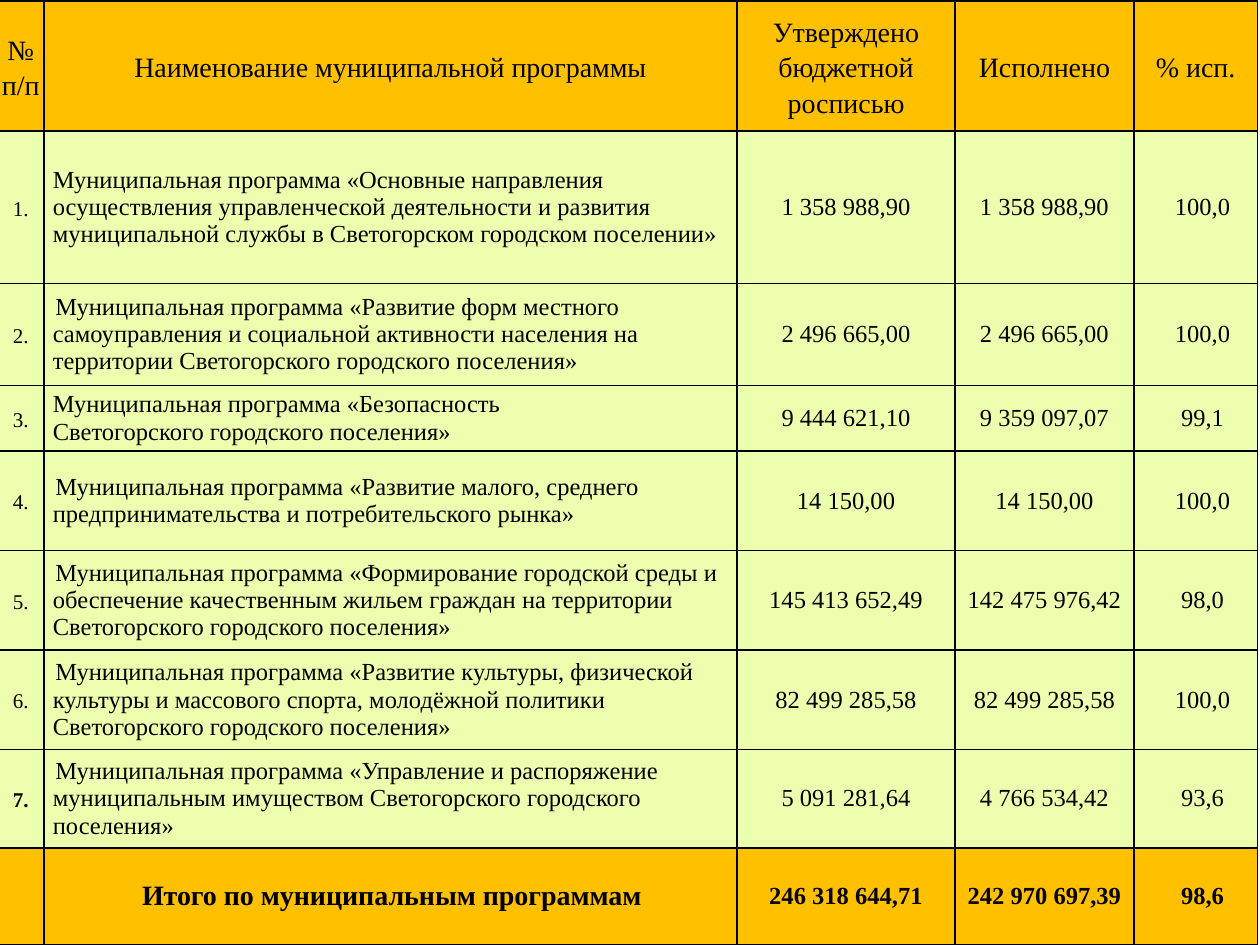
from dataclasses import dataclass

import pptx
import pptx.dml.color
import pptx.enum.text
import pptx.oxml.ns
import pptx.util
from lxml import etree

Inches = pptx.util.Inches
Pt = pptx.util.Pt
RGB = pptx.dml.color.RGBColor.from_string
qn = pptx.oxml.ns.qn
ALIGN = pptx.enum.text.PP_ALIGN
MIDDLE = pptx.enum.text.MSO_ANCHOR.MIDDLE


@dataclass(frozen=True)
class Theme:
    font: str = "Times New Roman"
    ink: str = "000000"
    accent: str = "FFC000"
    body: str = "CCFF33"
    body_alpha: int = 39
    heading_size: int = 16
    text_size: int = 14
    number_size: int = 12
    border: int = 1


THEME = Theme()

COL_WIDTHS = [0.37, 5.5, 1.73, 1.42, 0.98]
ROW_HEIGHTS = [1.03, 1.21, 0.81, 0.52, 0.79, 0.79, 0.79, 0.78, 0.77]
# Left margin and first-line indent of each column, in inches
INDENTS = [(0, 0), (0, 0.02), (0.02, -0.02), (0, 0), (0.11, 0)]

HEADER = ["№ п/п", "Наименование муниципальной программы",
          "Утверждено бюджетной росписью", "Исполнено", "% исп."]
PROGRAMS = [
    ("Муниципальная программа «Основные направления осуществления управленческой "
     "деятельности и развития муниципальной службы в Светогорском городском поселении»",
     "1 358 988,90", "1 358 988,90", "100,0"),
    ("Муниципальная программа «Развитие форм местного самоуправления и социальной "
     "активности населения на территории Светогорского городского поселения»",
     "2 496 665,00", "2 496 665,00", "100,0"),
    ("Муниципальная программа «Безопасность\nСветогорского городского поселения»",
     "9 444 621,10", "9 359 097,07", "99,1"),
    ("Муниципальная программа «Развитие малого, среднего предпринимательства "
     "и потребительского рынка»",
     "14 150,00", "14 150,00", "100,0"),
    ("Муниципальная программа «Формирование городской среды и обеспечение качественным "
     "жильем граждан на территории Светогорского городского поселения»",
     "145 413 652,49", "142 475 976,42", "98,0"),
    ("Муниципальная программа «Развитие культуры, физической культуры и массового спорта, "
     "молодёжной политики Светогорского городского поселения»",
     "82 499 285,58", "82 499 285,58", "100,0"),
    ("Муниципальная программа «Управление и распоряжение муниципальным имуществом "
     "Светогорского городского поселения»",
     "5 091 281,64", "4 766 534,42", "93,6"),
]
TOTAL = ["", "Итого по муниципальным программам",
         "246 318 644,71", "242 970 697,39", "98,6"]
NO_FIRST_LINE = (1, 3)  # programs whose name starts flush left


def write(cell, text, size=THEME.text_size, bold=False, align=ALIGN.CENTER,
          indent=(0, 0), inset=0.07, spaced=False):
    cell.vertical_anchor = MIDDLE
    cell.margin_left = cell.margin_right = Inches(inset)
    cell.margin_top = cell.margin_bottom = 0
    p = cell.text_frame.paragraphs[0]
    p.alignment = align
    if spaced:
        p.line_spacing = 1.15
        p.space_after = Pt(10)
    pPr = p._p.get_or_add_pPr()
    pPr.set("marL", str(Inches(indent[0])))
    pPr.set("indent", str(Inches(indent[1])))
    for i, line in enumerate(text.split("\n") if text else []):
        if i:
            p.add_line_break()
        r = p.add_run()
        r.text = line
        r.font.name = THEME.font
        r.font.size = Pt(size)
        r.font.bold = bold
        r.font.color.rgb = RGB(THEME.ink)


def paint(cell, color, alpha=None):
    """Border the cell on all sides and fill it, alpha in percent."""
    tcPr = cell._tc.get_or_add_tcPr()
    for side in ("lnL", "lnR", "lnT", "lnB"):
        ln = etree.SubElement(tcPr, qn(f"a:{side}"), w=str(Pt(THEME.border)))
        solid = etree.SubElement(ln, qn("a:solidFill"))
        etree.SubElement(solid, qn("a:srgbClr"), val=THEME.ink)
    cell.fill.solid()
    cell.fill.fore_color.rgb = RGB(color)
    if alpha is not None:
        clr = tcPr.find(qn("a:solidFill")).find(qn("a:srgbClr"))
        etree.SubElement(clr, qn("a:alpha"), val=str(alpha * 1000))


def header_row(cells):
    for cell, text in zip(cells, HEADER):
        paint(cell, THEME.accent)
        write(cell, text, size=THEME.heading_size, inset=0.02, spaced=True)


def program_row(cells, number, program):
    for cell in cells:
        paint(cell, THEME.body, THEME.body_alpha)
    name, *values = program
    write(cells[0], f"{number}.", size=THEME.number_size, inset=0.02, spaced=True,
          bold=number == len(PROGRAMS))
    write(cells[1], name, align=ALIGN.LEFT,
          indent=(0, 0) if number in NO_FIRST_LINE else INDENTS[1])
    for cell, value, indent in zip(cells[2:], values, INDENTS[2:]):
        write(cell, value, indent=indent)


def total_row(cells):
    for i, (cell, text) in enumerate(zip(cells, TOTAL)):
        paint(cell, THEME.accent)
        write(cell, text, bold=True, indent=INDENTS[i],
              size=THEME.heading_size if i == 1 else THEME.text_size)


def budget_table(s, left, top, width, height):
    frame = s.shapes.add_table(len(ROW_HEIGHTS), len(COL_WIDTHS), Inches(left),
                               Inches(top), Inches(width), Inches(height))
    table = frame.table
    table.first_row = table.horz_banding = False
    for column, w in zip(table.columns, COL_WIDTHS):
        column.width = Inches(w * width / sum(COL_WIDTHS))
    for row, h in zip(table.rows, ROW_HEIGHTS):
        row.height = Inches(h * height / sum(ROW_HEIGHTS))
    first, *middle, last = [list(row.cells) for row in table.rows]
    header_row(first)
    for number, (cells, program) in enumerate(zip(middle, PROGRAMS), 1):
        program_row(cells, number, program)
    total_row(last)


def main():
    prs = pptx.Presentation()
    prs.slide_width, prs.slide_height = Inches(10), Inches(7.5)
    s = prs.slides.add_slide(prs.slide_layouts[6])
    budget_table(s, -0.02, 0.01, 10, 7.49)
    prs.save("out.pptx")


if __name__ == "__main__":
    main()
